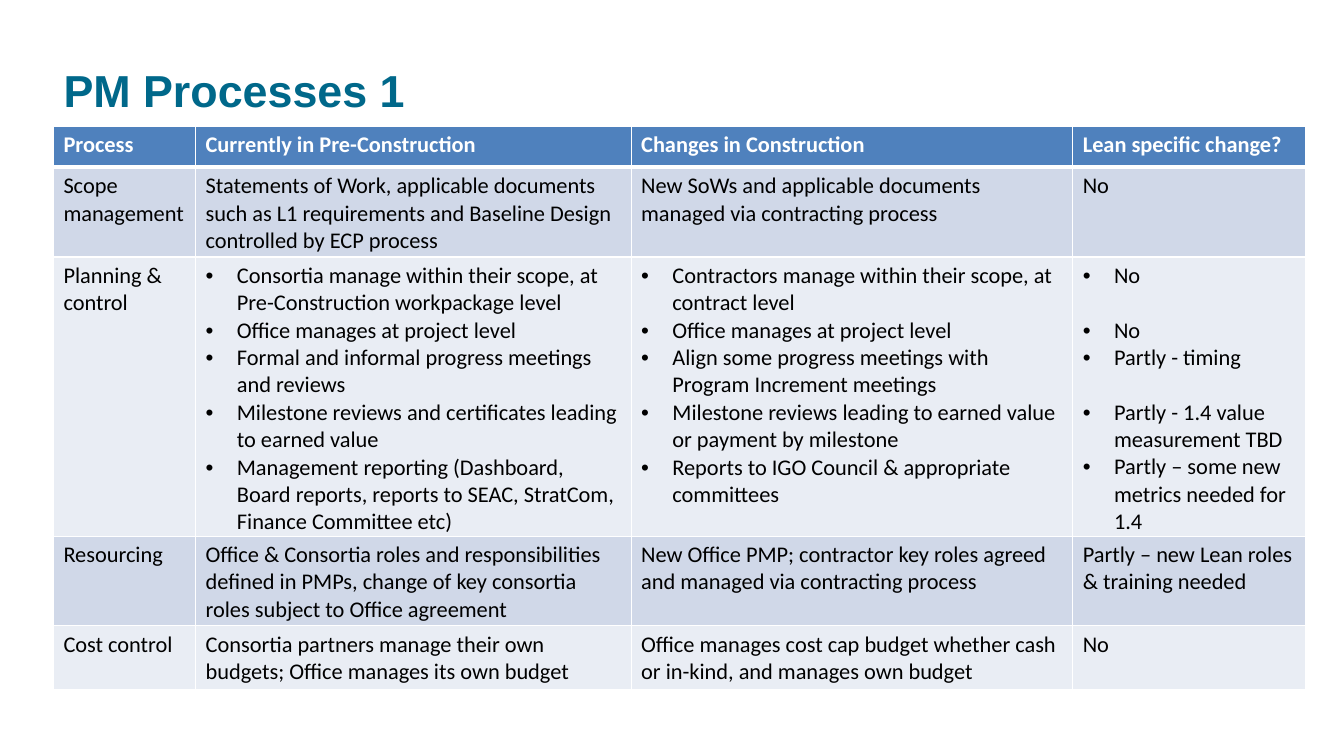
import pptx
import pptx.dml.color
import pptx.enum.text
import pptx.oxml
import pptx.oxml.ns
import pptx.util

EMU_PER_PX = 9144
WHITE, BLACK, TEAL = "FFFFFF", "000000", "00688A"
HEADER_BLUE, BAND_FILLS = "4F81BD", ("D0D8E8", "E9EDF4")
TEXT_SIZE, LINE_HEIGHT = 16, 19.5
COLUMN_WIDTHS = (141, 432, 438, 231)
ROW_HEIGHTS = (41, 89, 277, 89, 63)
ANSWERS_WITH_GAP_AFTER = (0, 2)

HEADINGS = ("Process", "Currently in Pre-Construction",
            "Changes in Construction", "Lean specific change?")
PROCESSES = (
    ("Scope management",
     "Statements of Work, applicable documents such as L1 requirements "
     "and Baseline Design controlled by ECP process",
     "New SoWs and applicable documents managed via contracting process",
     "No"),
    ("Planning & control",
     ["Consortia manage within their scope, at Pre-Construction workpackage level",
      "Office manages at project level",
      "Formal and informal progress meetings and reviews",
      "Milestone reviews and certificates leading to earned value",
      "Management reporting (Dashboard, Board reports, reports to SEAC, "
      "StratCom, Finance Committee etc)"],
     ["Contractors manage within their scope, at contract level",
      "Office manages at project level",
      "Align some progress meetings with Program Increment meetings",
      "Milestone reviews leading to earned value or payment by milestone",
      "Reports to IGO Council & appropriate committees"],
     ["No", "No", "Partly - timing", "Partly - 1.4 value measurement TBD",
      "Partly – some new metrics needed for 1.4"]),
    ("Resourcing",
     "Office & Consortia roles and responsibilities defined in PMPs, "
     "change of key consortia roles subject to Office agreement",
     "New Office PMP; contractor key roles agreed and managed via "
     "contracting process",
     "Partly – new Lean roles & training needed"),
    ("Cost control",
     "Consortia partners manage their own budgets; Office manages its own budget",
     "Office manages cost cap budget whether cash or in-kind, and manages own budget",
     "No"),
)


def px(length):
    return pptx.util.Emu(length * EMU_PER_PX)


def color(hex_string):
    return pptx.dml.color.RGBColor.from_string(hex_string)


def format_runs(paragraph, font_name, size, hex_string, bold):
    for run in paragraph.runs:
        run.font.name = font_name
        run.font.size = pptx.util.Pt(size)
        run.font.color.rgb = color(hex_string)
        run.font.bold = bold


def add_bullet(paragraph):
    properties = paragraph._p.get_or_add_pPr()
    properties.set("marL", str(px(31)))
    properties.set("indent", str(-px(31)))
    namespace = pptx.oxml.ns.nsdecls("a")
    properties.append(pptx.oxml.parse_xml(f'<a:buFont {namespace} typeface="Arial"/>'))
    properties.append(pptx.oxml.parse_xml(f'<a:buChar {namespace} char="•"/>'))


def set_borders(cell, top, bottom):
    properties = cell._tc.get_or_add_tcPr()
    widths = {"lnL": 1, "lnR": 1, "lnT": top, "lnB": bottom}
    for position, (side, width) in enumerate(widths.items()):
        properties.insert(position, pptx.oxml.parse_xml(
            f'<a:{side} {pptx.oxml.ns.nsdecls("a")} w="{pptx.util.Pt(width)}">'
            f'<a:solidFill><a:srgbClr val="{WHITE}"/></a:solidFill></a:{side}>'))


def fill_cell(cell, content, row, column):
    is_header = row == 0
    is_list = isinstance(content, list)
    cell.margin_bottom = 0
    cell.fill.solid()
    cell.fill.fore_color.rgb = color(HEADER_BLUE if is_header else BAND_FILLS[(row - 1) % 2])
    set_borders(cell, top=3 if row == 1 else 1, bottom=3 if is_header else 1)
    cell.text_frame.text = "\n".join(content) if is_list else content
    for index, paragraph in enumerate(cell.text_frame.paragraphs):
        if is_list:
            add_bullet(paragraph)
            if column == len(HEADINGS) - 1 and index in ANSWERS_WITH_GAP_AFTER:
                paragraph.space_after = pptx.util.Pt(LINE_HEIGHT)
        format_runs(paragraph, "Calibri", TEXT_SIZE, WHITE if is_header else BLACK, is_header)


def add_process_table(slide):
    rows = (HEADINGS,) + PROCESSES
    table = slide.shapes.add_table(
        len(rows), len(HEADINGS), px(53), px(125),
        px(sum(COLUMN_WIDTHS)), px(sum(ROW_HEIGHTS))).table
    for column, width in zip(table.columns, COLUMN_WIDTHS):
        column.width = px(width)
    for table_row, height in zip(table.rows, ROW_HEIGHTS):
        table_row.height = px(height)
    for row, contents in enumerate(rows):
        for column, content in enumerate(contents):
            fill_cell(table.cell(row, column), content, row, column)


def set_title(slide, wording):
    title = slide.shapes.title
    title.left, title.top, title.width, title.height = px(53), px(55), px(915), px(68)
    title.text_frame.text = wording
    title.text_frame.vertical_anchor = pptx.enum.text.MSO_ANCHOR.MIDDLE
    heading = title.text_frame.paragraphs[0]
    heading.alignment = pptx.enum.text.PP_ALIGN.LEFT
    format_runs(heading, "Arial", 32, TEAL, True)


def main():
    presentation = pptx.Presentation()
    presentation.slide_width, presentation.slide_height = px(1333), px(750)
    slide = presentation.slides.add_slide(presentation.slide_layouts[5])
    set_title(slide, "PM Processes 1")
    add_process_table(slide)
    presentation.save("out.pptx")


if __name__ == "__main__":
    main()
